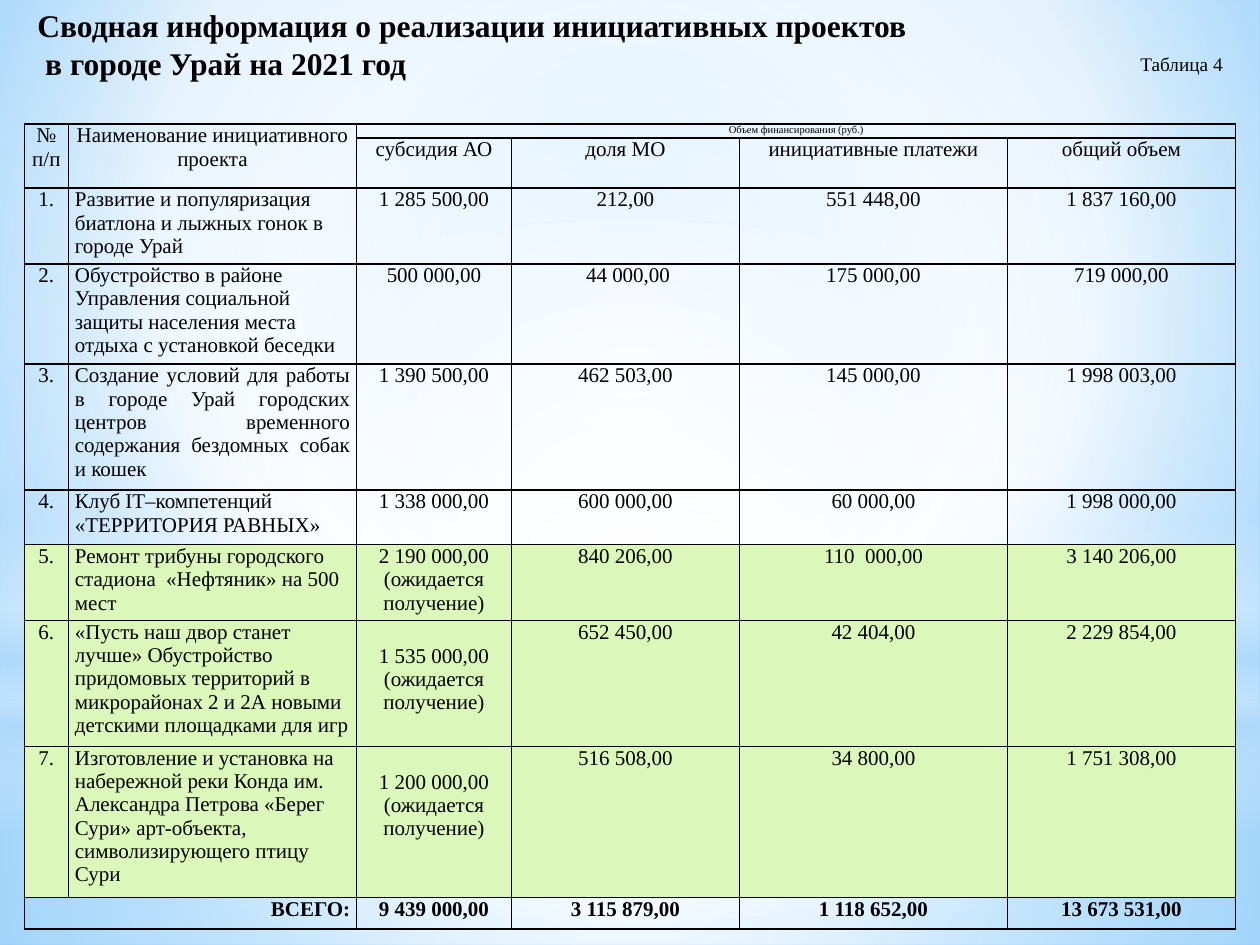
"""Build the summary slide of civic projects with its funding table."""
from lxml.etree import SubElement
from pptx import Presentation
from pptx.dml.color import RGBColor
from pptx.enum.shapes import MSO_SHAPE
from pptx.enum.text import MSO_ANCHOR, MSO_AUTO_SIZE, PP_ALIGN
from pptx.oxml.ns import qn
from pptx.util import Cm, Pt


def blend(fill, root, stops, focus):
    """Give a fill gradient stops of place, colour and opacity."""
    fill.gradient()
    grad = root.find(".//" + qn("a:gradFill"))
    grad.clear()
    grad.set("rotWithShape", "1")
    places = SubElement(grad, qn("a:gsLst"))
    for place, color, alpha in stops:
        stop = SubElement(places, qn("a:gs"), pos=str(place * 1000))
        tone = SubElement(stop, qn("a:srgbClr"), val=color)
        if alpha < 100:
            SubElement(tone, qn("a:alpha"), val=str(alpha * 1000))
    if focus:
        way = SubElement(grad, qn("a:path"), path="circle")
        sides = {side: str(part * 1000) for side, part in zip("ltrb", focus)}
        SubElement(way, qn("a:fillToRect"), **sides)
    else:
        SubElement(grad, qn("a:lin"), ang="5400000", scaled="0")


def write(para, text, size, bold=False, align=PP_ALIGN.LEFT):
    """Add one black run to an aligned paragraph."""
    para.alignment = align
    run = para.add_run()
    run.text = text
    run.font.name = "Times New Roman"
    run.font.size = Pt(size)
    run.font.bold = bold
    run.font.color.rgb = RGBColor.from_string("000000")


deck = Presentation()
deck.slide_width, deck.slide_height = Cm(25.4), Cm(19.05)
slide = deck.slides.add_slide(deck.slide_layouts[5])
shapes = slide.shapes

blend(slide.background.fill, slide.element,
      [(0, "9ED5FF", 100), (60, "FFFFFF", 100), (100, "5BB9FF", 100)],
      (20, 10, 20, 60))

WHITE, SKY, MID = "FFFFFF", "B4DCFA", (50, 50, 50, 50)
layers = [
    (MSO_SHAPE.RECTANGLE, 14.17, 4.88, MID,
     [(0, WHITE, 91), (37, WHITE, 76), (100, SKY, 79)]),
    (MSO_SHAPE.RECTANGLE, 0, 14.17, MID,
     [(0, WHITE, 89), (48, WHITE, 62), (100, SKY, 79)]),
    (MSO_SHAPE.RECTANGLE, 10.46, 6.35, None,
     [(0, WHITE, 0), (29, WHITE, 30), (45, SKY, 40),
      (55, WHITE, 26), (65, SKY, 60), (100, WHITE, 0)]),
    (MSO_SHAPE.OVAL, 4.45, 14.17, MID, [(0, WHITE, 100), (56, WHITE, 0)]),
]
for kind, top, height, focus, stops in layers:
    layer = shapes.add_shape(kind, 0, Cm(top), Cm(25.4), Cm(height))
    layer.shadow.inherit = False
    layer.line.fill.background()
    blend(layer.fill, layer.element, stops, focus)

WAIT = "(ожидается получение)"
rows = [
    ["№\nп/п", "Наименование инициативного проекта",
     "Объем финансирования (руб.)", "", "", ""],
    ["", "", "субсидия АО", "доля МО", "инициативные платежи", "общий объем"],
    ["1.", "Развитие и популяризация биатлона и лыжных гонок в городе Урай",
     "1 285 500,00", "212,00", "551 448,00", "1 837 160,00"],
    ["2.", "Обустройство в районе Управления социальной защиты населения "
     "места отдыха с установкой беседки",
     "500 000,00", " 44 000,00", "175 000,00", "719 000,00"],
    ["3.", "Создание условий для работы в городе Урай городских центров "
     "временного содержания бездомных собак и кошек",
     "1 390 500,00", "462 503,00", "145 000,00", "1 998 003,00"],
    ["4.", "Клуб IT–компетенций «ТЕРРИТОРИЯ РАВНЫХ»",
     "1 338 000,00", "600 000,00", "60 000,00", "1 998 000,00"],
    ["5.", "Ремонт трибуны городского стадиона  «Нефтяник» на 500 мест",
     "2 190 000,00\n" + WAIT, "840 206,00", "110  000,00", "3 140 206,00"],
    ["6.", "«Пусть наш двор станет лучше» Обустройство придомовых территорий "
     "в микрорайонах 2 и 2А новыми детскими площадками для игр",
     "1 535 000,00\n" + WAIT, "652 450,00", "42 404,00", "2 229 854,00"],
    ["7.", "Изготовление и установка на набережной реки Конда им. Александра "
     "Петрова «Берег Сури» арт-объекта, символизирующего птицу Сури",
     "1 200 000,00\n" + WAIT, "516 508,00", "34 800,00", "1 751 308,00"],
    ["ВСЕГО:", "", "9 439 000,00", "3 115 879,00", "1 118 652,00",
     "13 673 531,00"],
]
widths = [0.89, 5.81, 3.12, 4.6, 5.4, 4.6]
heights = [0.28, 1.01, 1.53, 2.02, 2.54, 1.1, 1.53, 2.54, 3.04, 0.64]
table = shapes.add_table(len(rows), len(widths), Cm(0.49), Cm(2.5),
                         Cm(sum(widths)), Cm(sum(heights))).table
table.first_row = table.horz_banding = False
for column, width in zip(table.columns, widths):
    column.width = Cm(width)
for line, height in zip(table.rows, heights):
    line.height = Cm(height)
for top, left, low, right in [(0, 0, 1, 0), (0, 1, 1, 1), (0, 2, 0, 5),
                              (9, 0, 9, 1)]:
    table.cell(top, left).merge(table.cell(low, right))

for r, row in enumerate(rows):
    for c, text in enumerate(row):
        cell = table.cell(r, c)
        cell.margin_left = cell.margin_right = Cm(0.13)
        cell.margin_top = Cm(0.48 if c == 2 and r in (7, 8) else 0)
        cell.margin_bottom = 0
        props = cell._tc.get_or_add_tcPr()
        for side in "LRTB":
            edge = SubElement(props, qn("a:ln" + side), w=str(Pt(1)))
            ink = SubElement(edge, qn("a:solidFill"))
            SubElement(ink, qn("a:srgbClr"), val="000000")
        if 6 <= r <= 8:
            cell.fill.solid()
            cell.fill.fore_color.rgb = RGBColor.from_string("DCF7BA")
        else:
            cell.fill.background()
        if not text:
            continue
        align = PP_ALIGN.CENTER
        if r == 9 and c == 0:
            align = PP_ALIGN.RIGHT
        elif c == 1 and r > 1:
            align = PP_ALIGN.JUSTIFY if r == 4 else PP_ALIGN.LEFT
        size = 6 if (r, c) == (0, 2) else 12
        frame = cell.text_frame
        for n, part in enumerate(text.split("\n")):
            para = frame.add_paragraph() if n else frame.paragraphs[0]
            write(para, part, size, r == 9, align)

title = shapes.title
title.left, title.top, title.width, title.height = (
    Cm(0.5), Cm(0), Cm(24.9), Cm(1.8))
frame = title.text_frame
frame.auto_size = MSO_AUTO_SIZE.NONE
frame.vertical_anchor = MSO_ANCHOR.TOP
write(frame.paragraphs[0],
      "Сводная информация о реализации инициативных проектов", 18, True)
write(frame.add_paragraph(), " в городе Урай на 2021 год", 18, True)
shapes._spTree.append(title.element)

label = shapes.add_textbox(Cm(22.7), Cm(0.92), Cm(2.3), Cm(0.73))
label.text_frame.word_wrap = False
write(label.text_frame.paragraphs[0], "Таблица 4 ", 11, align=PP_ALIGN.RIGHT)

deck.save("out.pptx")
